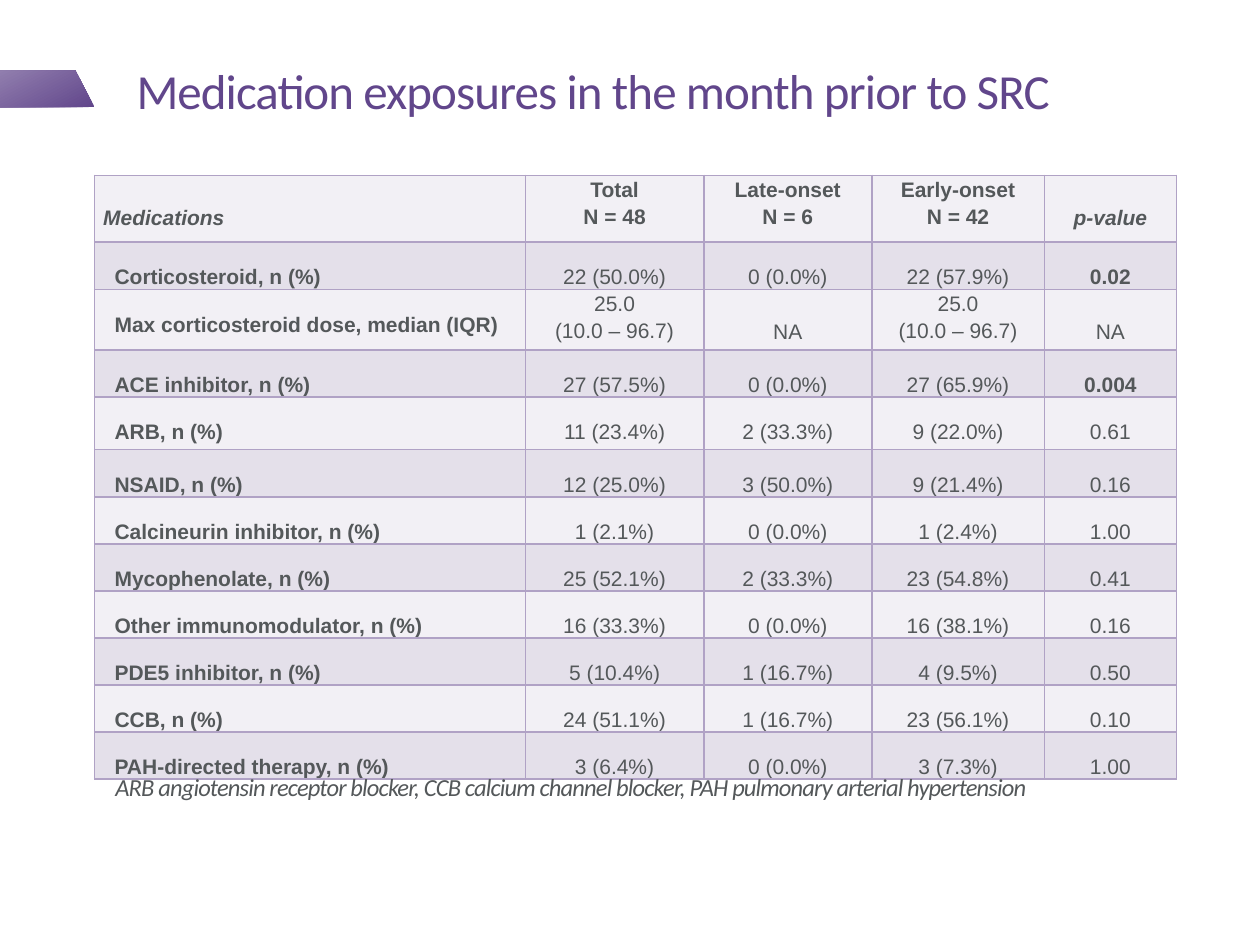
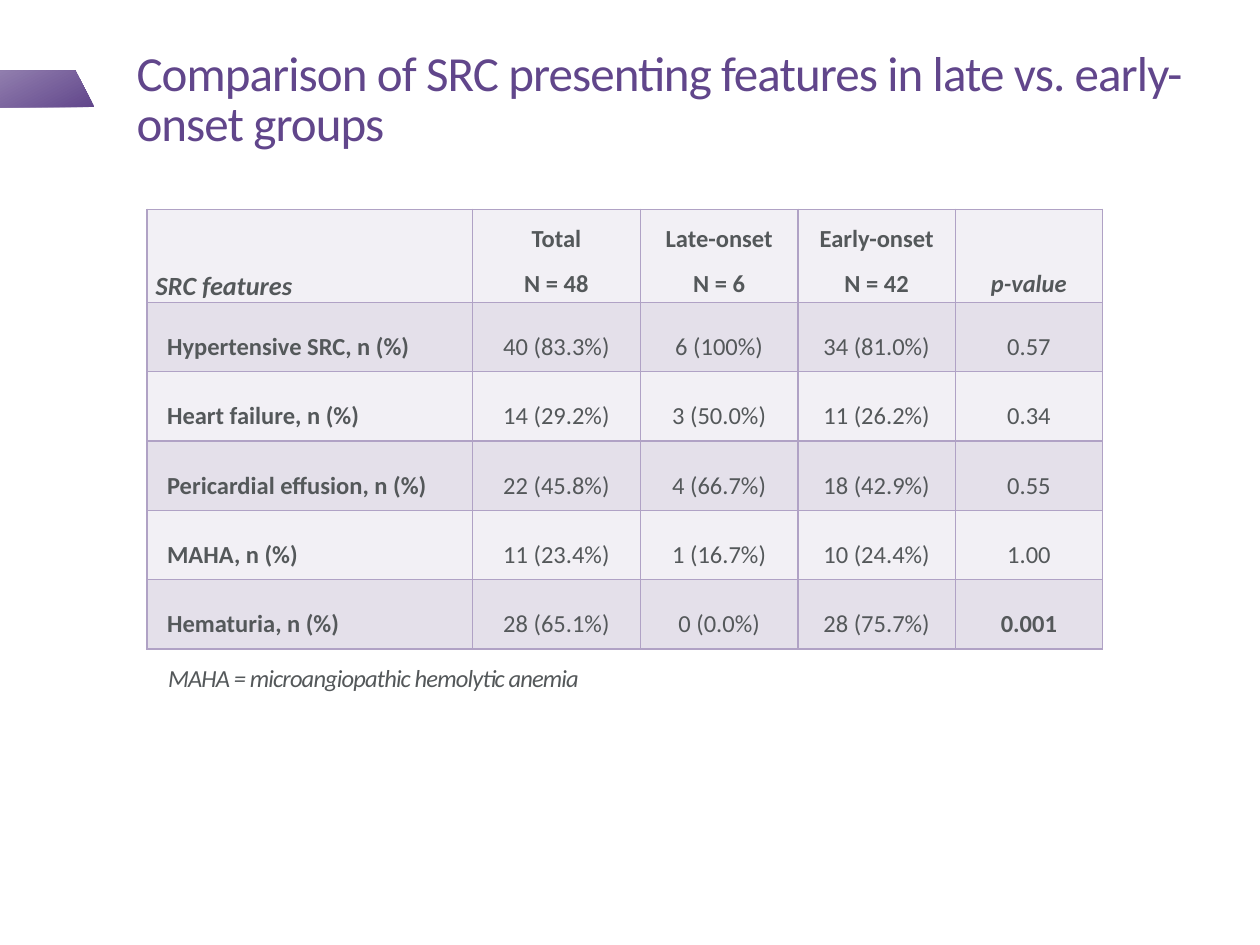
"""Build two slides that compare SRC patient groups in tables."""
from dataclasses import dataclass

from lxml.etree import SubElement
from pptx import Presentation
from pptx.dml.color import RGBColor
from pptx.enum.text import MSO_ANCHOR, MSO_AUTO_SIZE, PP_ALIGN
from pptx.oxml.ns import qn
from pptx.util import Pt

PURPLE, LILAC, BORDER = "61468B", "917EAE", "B0A2C5"
GREY, PALE, SHADED = "54585A", "F2F0F5", "E4E0EA"
INSET = 5
LABEL_INDENT = 6.5
SIGNIFICANT = 0.05


@dataclass(frozen=True)
class Area:
    left: float
    top: float
    width: float
    height: float

    def lengths(self) -> tuple:
        return tuple(Pt(n) for n in (self.left, self.top, self.width, self.height))


@dataclass(frozen=True)
class Style:
    font: str
    size: float
    heading_size: float
    header_spacing: float
    line_height: float


@dataclass(frozen=True)
class Study:
    title: str
    title_area: Area
    heading: str
    table_area: Area
    widths: list[float]
    heights: list[float]
    style: Style
    rows: list[tuple[str, str, str, str, str]]
    note: str
    note_area: Area


GROUPS = ("Total\nN = 48", "Late-onset\nN = 6", "Early-onset\nN = 42", "p-value")

STUDIES = [
    Study(
        title="Medication exposures in the month prior to SRC",
        title_area=Area(78, 12, 630, 60),
        heading="Medications",
        table_area=Area(54, 100.2, 618.4, 330),
        widths=[246.2, 102, 96, 98.6, 75.6],
        heights=[38.2, 25.2, 34.6, 25.2, 30.2] + [25.2] * 7,
        style=Style("Arial", 12, 12, 1.14, 13.8),
        rows=[
            ("Corticosteroid, n (%)", "22 (50.0%)", "0 (0.0%)", "22 (57.9%)", "0.02"),
            ("Max corticosteroid dose, median (IQR)", "25.0\n(10.0 – 96.7)", "NA",
             "25.0\n(10.0 – 96.7)", "NA"),
            ("ACE inhibitor, n (%)", "27 (57.5%)", "0 (0.0%)", "27 (65.9%)", "0.004"),
            ("ARB, n (%)", "11 (23.4%)", "2 (33.3%)", "9 (22.0%)", "0.61"),
            ("NSAID, n (%)", "12 (25.0%)", "3 (50.0%)", "9 (21.4%)", "0.16"),
            ("Calcineurin inhibitor, n (%)", "1 (2.1%)", "0 (0.0%)", "1 (2.4%)", "1.00"),
            ("Mycophenolate, n (%)", "25 (52.1%)", "2 (33.3%)", "23 (54.8%)", "0.41"),
            ("Other immunomodulator, n (%)", "16 (33.3%)", "0 (0.0%)", "16 (38.1%)", "0.16"),
            ("PDE5 inhibitor, n (%)", "5 (10.4%)", "1 (16.7%)", "4 (9.5%)", "0.50"),
            ("CCB, n (%)", "24 (51.1%)", "1 (16.7%)", "23 (56.1%)", "0.10"),
            ("PAH-directed therapy, n (%)", "3 (6.4%)", "0 (0.0%)", "3 (7.3%)", "1.00"),
        ],
        note="ARB angiotensin receptor blocker, CCB calcium channel blocker, "
             "PAH pulmonary arterial hypertension",
        note_area=Area(66, 443, 618, 32),
    ),
    Study(
        title="Comparison of SRC presenting features in late vs. early-onset groups",
        title_area=Area(78, 30, 608, 60),
        heading="SRC features",
        table_area=Area(84, 119.6, 546, 246),
        widths=[186, 96, 90, 90, 84],
        heights=[48] + [39.6] * 5,
        style=Style("Calibri", 14, 15, 1.5, 17.1),
        rows=[
            ("Hypertensive SRC, n (%)", "40 (83.3%)", "6 (100%)", "34 (81.0%)", "0.57"),
            ("Heart failure, n (%)", "14 (29.2%)", "3 (50.0%)", "11 (26.2%)", "0.34"),
            ("Pericardial effusion, n (%)", "22 (45.8%)", "4 (66.7%)", "18 (42.9%)", "0.55"),
            ("MAHA, n (%)", "11 (23.4%)", "1 (16.7%)", "10 (24.4%)", "1.00"),
            ("Hematuria, n (%)", "28 (65.1%)", "0 (0.0%)", "28 (75.7%)", "0.001"),
        ],
        note="MAHA = microangiopathic hemolytic anemia",
        note_area=Area(96, 381, 264, 32),
    ),
]


def color(value: str) -> RGBColor:
    return RGBColor.from_string(value)


def format_para(para, font: str, size: float, ink: str, spacing: float,
                bold: bool = False, italic: bool = False, tight: bool = False) -> None:
    para.line_spacing = spacing
    para.font.name, para.font.size = font, Pt(size)
    para.font.bold, para.font.italic = bold, italic
    para.font.color.rgb = color(ink)
    if tight:
        para._p.pPr.find(qn("a:defRPr")).set("spc", "-50")


def set_margins(target, left: float, top: float, right: float, bottom: float) -> None:
    target.margin_left, target.margin_top = Pt(left), Pt(top)
    target.margin_right, target.margin_bottom = Pt(right), Pt(bottom)


def add_band(page, layout) -> None:
    builder = page.shapes.build_freeform(Pt(0), Pt(40.2))
    corners = [(43, 40.2), (54, 61.2), (0, 61.2)]
    builder.add_line_segments([(Pt(x), Pt(y)) for x, y in corners], close=True)
    band = builder.convert_to_shape()
    band.shadow.inherit = False
    band.line.fill.background()
    band.fill.gradient()
    band.fill.gradient_angle = 118
    for stop, position, shade in zip(band.fill.gradient_stops, (0, 1), (PURPLE, LILAC)):
        stop.position = position
        stop.color.rgb = color(shade)
    layout.shapes.element.append(band.element)


def add_title(page, study: Study) -> None:
    title = page.shapes.title
    title.left, title.top, title.width, title.height = study.title_area.lengths()
    frame = title.text_frame
    frame.text = study.title
    frame.word_wrap = True
    frame.auto_size = MSO_AUTO_SIZE.NONE
    frame.vertical_anchor = MSO_ANCHOR.BOTTOM
    set_margins(frame, 0, 0, 7.2, 3.6)
    para = frame.paragraphs[0]
    para.alignment = PP_ALIGN.LEFT
    format_para(para, "Calibri", 28, PURPLE, 0.85, tight=True)


def add_borders(cell) -> None:
    properties = cell._tc.get_or_add_tcPr()
    for side in ("a:lnL", "a:lnR", "a:lnT", "a:lnB"):
        line = SubElement(properties, qn(side), w=str(Pt(1)))
        SubElement(SubElement(line, qn("a:solidFill")), qn("a:srgbClr"), val=BORDER)


def is_significant(value: str) -> bool:
    return value != "NA" and float(value) < SIGNIFICANT


def fill_cell(cell, text: str, row: int, column: int, two_lines: bool, style: Style) -> None:
    header, label, last = row == 0, column == 0, column == 4
    if not two_lines:
        spacing = 2.0
    elif label and not header:
        spacing = 1.0
    else:
        spacing = style.header_spacing
    drop = style.line_height * spacing if two_lines and "\n" not in text else 0
    indent = LABEL_INDENT if label and not header else 0
    set_margins(cell, INSET + indent, round(drop, 2), INSET, 0)
    add_borders(cell)
    cell.fill.solid()
    cell.fill.fore_color.rgb = color(SHADED if row % 2 else PALE)
    cell.text_frame.text = text
    for para in cell.text_frame.paragraphs:
        para.alignment = PP_ALIGN.LEFT if label else PP_ALIGN.CENTER
        format_para(para, style.font, style.heading_size if header and label else style.size,
                    GREY, spacing, bold=header or label or (last and is_significant(text)),
                    italic=header and (label or last))


def add_study_table(page, study: Study) -> None:
    rows = [(study.heading, *GROUPS), *study.rows]
    table = page.shapes.add_table(len(rows), len(study.widths),
                                  *study.table_area.lengths()).table
    table.first_row = table.horz_banding = False
    for table_column, width in zip(table.columns, study.widths):
        table_column.width = Pt(width)
    for row, (texts, height) in enumerate(zip(rows, study.heights)):
        table.rows[row].height = Pt(height)
        two_lines = any("\n" in text for text in texts)
        for column, text in enumerate(texts):
            fill_cell(table.cell(row, column), text, row, column, two_lines, study.style)


def add_note(page, study: Study) -> None:
    frame = page.shapes.add_textbox(*study.note_area.lengths()).text_frame
    frame.word_wrap = True
    set_margins(frame, 0, 0, 0, 0)
    frame.text = study.note
    format_para(frame.paragraphs[0], "Calibri", 14, GREY, 0.9, italic=True, tight=True)


def main() -> None:
    deck = Presentation()
    deck.slide_width, deck.slide_height = Pt(720), Pt(540)
    layout = deck.slide_layouts[5]
    for number, study in enumerate(STUDIES):
        page = deck.slides.add_slide(layout)
        if number == 0:
            add_band(page, layout)
        add_title(page, study)
        add_study_table(page, study)
        add_note(page, study)
    deck.save("out.pptx")


if __name__ == "__main__":
    main()
